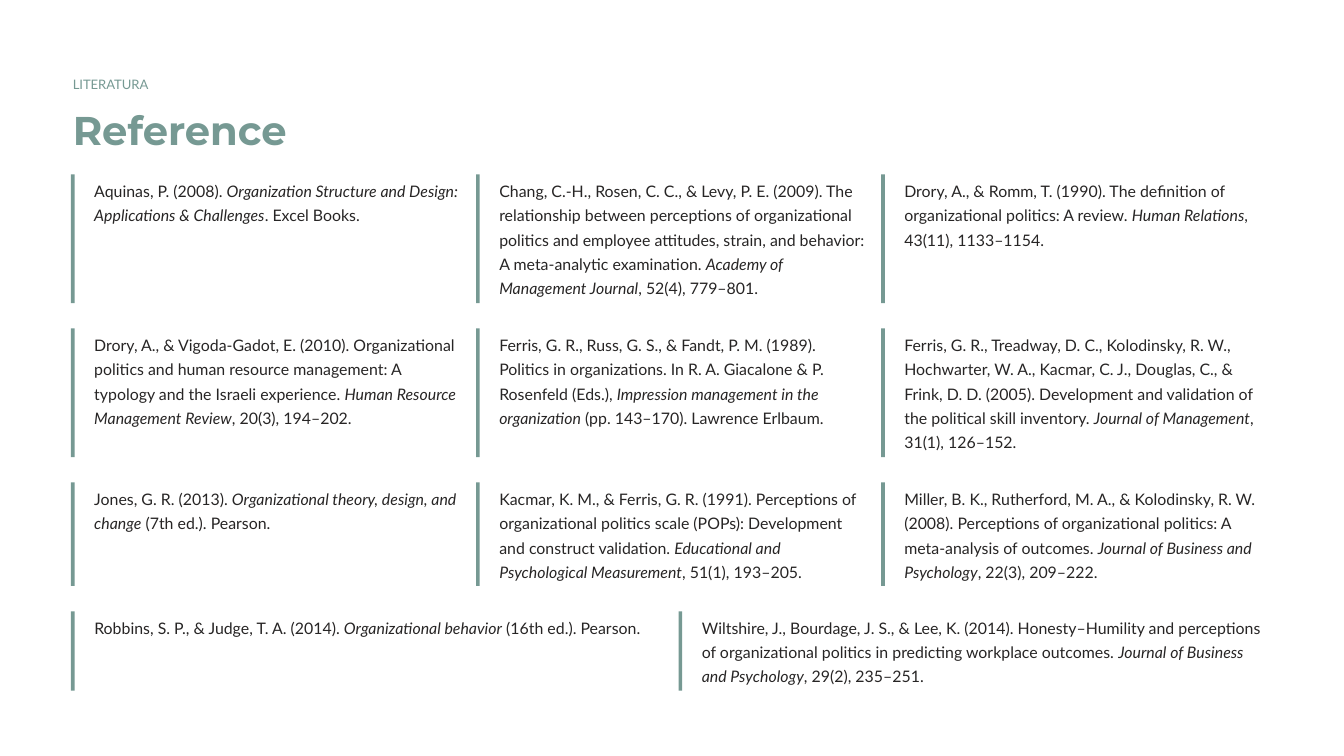
from dataclasses import dataclass

from pptx import Presentation
from pptx.dml.color import RGBColor
from pptx.enum.shapes import MSO_SHAPE as Preset
from pptx.enum.text import MSO_ANCHOR as Anchor, MSO_AUTO_SIZE as AutoSize, PP_ALIGN as Align
from pptx.util import Emu, Inches, Pt

EMU_PER_PX = Inches(1) // 144
TITLE_ONLY = 5
GREEN, INK, WHITE = "769993", "272525", "FFFFFF"
LEFT, TOP = 76, 187
BAR_WIDTH, BAR_PADDING, ROW_GAP = 4, 5, 27
TEXT_INDENT, TEXT_DROP = 25, 2


@dataclass(frozen=True)
class TextStyle:
    font: str
    size: float
    leading: float
    color: str
    bold: bool = False


@dataclass(frozen=True)
class Reference:
    lines: int
    lead: str
    work: str
    tail: str


@dataclass(frozen=True)
class Row:
    column_step: int
    text_width: int
    references: tuple[Reference, ...]


LABEL = TextStyle("Lato", 7, 10.5, GREEN)
HEADING = TextStyle("Montserrat", 21.5, 27, GREEN, bold=True)
BODY = TextStyle("Lato", 8.5, 13, INK)

ROWS = (
    Row(434, 393, (
        Reference(2, "Aquinas, P. (2008). ",
                  "Organization Structure and Design: Applications & Challenges", ". Excel Books."),
        Reference(5, "Chang, C.-H., Rosen, C. C., & Levy, P. E. (2009). The relationship between "
                  "perceptions of organizational politics and employee attitudes, strain, and "
                  "behavior: A meta-analytic examination. ",
                  "Academy of Management Journal", ", 52(4), 779–801."),
        Reference(3, "Drory, A., & Romm, T. (1990). The definition of organizational politics: "
                  "A review. ", "Human Relations", ", 43(11), 1133–1154."),
    )),
    Row(434, 393, (
        Reference(4, "Drory, A., & Vigoda-Gadot, E. (2010). Organizational politics and human "
                  "resource management: A typology and the Israeli experience. ",
                  "Human Resource Management Review", ", 20(3), 194–202."),
        Reference(4, "Ferris, G. R., Russ, G. S., & Fandt, P. M. (1989). Politics in "
                  "organizations. In R. A. Giacalone & P. Rosenfeld (Eds.), ",
                  "Impression management in the organization",
                  " (pp. 143–170). Lawrence Erlbaum."),
        Reference(5, "Ferris, G. R., Treadway, D. C., Kolodinsky, R. W., Hochwarter, W. A., "
                  "Kacmar, C. J., Douglas, C., & Frink, D. D. (2005). Development and validation "
                  "of the political skill inventory. ",
                  "Journal of Management", ", 31(1), 126–152."),
    )),
    Row(434, 393, (
        Reference(2, "Jones, G. R. (2013). ",
                  "Organizational theory, design, and change", " (7th ed.). Pearson."),
        Reference(4, "Kacmar, K. M., & Ferris, G. R. (1991). Perceptions of organizational "
                  "politics scale (POPs): Development and construct validation. ",
                  "Educational and Psychological Measurement", ", 51(1), 193–205."),
        Reference(4, "Miller, B. K., Rutherford, M. A., & Kolodinsky, R. W. (2008). Perceptions "
                  "of organizational politics: A meta-analysis of outcomes. ",
                  "Journal of Business and Psychology", ", 22(3), 209–222."),
    )),
    Row(651, 611, (
        Reference(1, "Robbins, S. P., & Judge, T. A. (2014). ",
                  "Organizational behavior", " (16th ed.). Pearson."),
        Reference(3, "Wiltshire, J., Bourdage, J. S., & Lee, K. (2014). Honesty–Humility and "
                  "perceptions of organizational politics in predicting workplace outcomes. ",
                  "Journal of Business and Psychology", ", 29(2), 235–251."),
    )),
)


def px(length: int) -> Emu:
    return Emu(length * EMU_PER_PX)


def rgb(color: str) -> RGBColor:
    return RGBColor.from_string(color)


def text_height(lines: int) -> int:
    """Height of body lines, each 26 2/3 px tall."""
    return lines * 80 // 3


def set_all(target, values: dict) -> None:
    for name, value in values.items():
        setattr(target, name, value)


def write(shape, spans: list[tuple[str, bool]], style: TextStyle, wrap: bool = True) -> None:
    """Fill a shape with one paragraph of (text, italic) spans."""
    frame = shape.text_frame
    set_all(frame, {
        "margin_left": 0, "margin_top": 0, "margin_right": 0, "margin_bottom": 0,
        "auto_size": AutoSize.NONE, "vertical_anchor": Anchor.TOP, "word_wrap": wrap,
    })
    para = frame.paragraphs[0]
    set_all(para, {"alignment": Align.LEFT, "line_spacing": Pt(style.leading)})
    for text, italic in spans:
        span = para.add_run()
        span.text = text
        set_all(span.font, {"name": style.font, "size": Pt(style.size),
                            "bold": style.bold, "italic": italic})
        span.font.color.rgb = rgb(style.color)


def add_bar(slide, left: int, top: int, height: int) -> None:
    bar = slide.shapes.add_shape(Preset.RECTANGLE, px(left), px(top), px(BAR_WIDTH), px(height))
    bar.shadow.inherit = False
    bar.fill.solid()
    bar.fill.fore_color.rgb = rgb(GREEN)
    bar.line.fill.background()


def add_row(slide, row: Row, top: int) -> int:
    """Draw one row of references and return the top of the next row."""
    height = text_height(max(ref.lines for ref in row.references)) + BAR_PADDING
    for column, ref in enumerate(row.references):
        left = LEFT + column * row.column_step
        add_bar(slide, left, top, height)
        box = slide.shapes.add_textbox(px(left + TEXT_INDENT), px(top + TEXT_DROP),
                                       px(row.text_width), px(text_height(ref.lines)))
        write(box, [(ref.lead, False), (ref.work, True), (ref.tail, False)], BODY)
    return top + height + ROW_GAP


def main() -> None:
    deck = Presentation()
    set_all(deck, {"slide_width": px(1440), "slide_height": px(810)})
    slide = deck.slides.add_slide(deck.slide_layouts[TITLE_ONLY])
    slide.background.fill.solid()
    slide.background.fill.fore_color.rgb = rgb(WHITE)

    label = slide.shapes.add_textbox(px(78), px(78), px(72), px(22))
    write(label, [("LITERATURA", False)], LABEL, wrap=False)
    title = slide.shapes.title
    set_all(title, {"left": px(78), "top": px(111), "width": px(439), "height": px(55)})
    write(title, [("Reference", False)], HEADING)

    top = TOP
    for row in ROWS:
        top = add_row(slide, row, top)
    deck.save("out.pptx")


if __name__ == "__main__":
    main()
